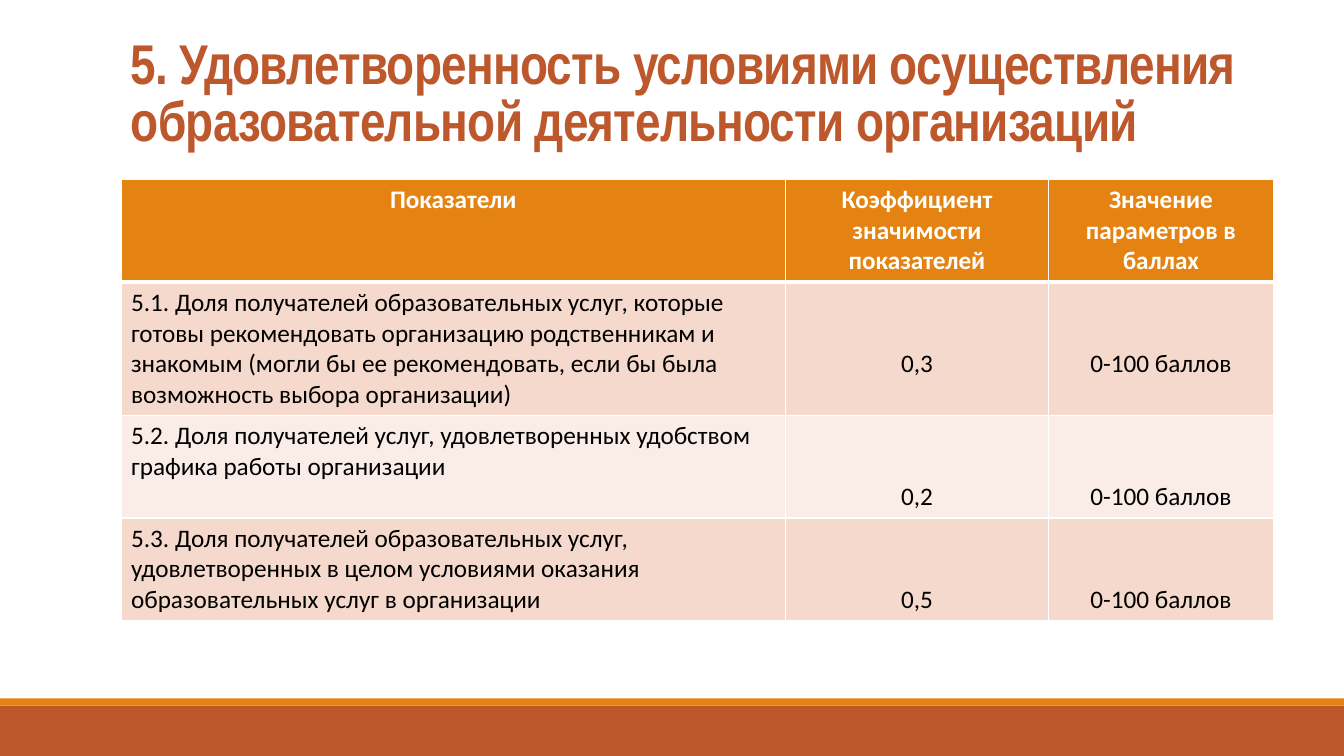
"""Build the slide on satisfaction with the conditions of educational activity."""
from dataclasses import dataclass

from lxml.etree import SubElement
from pptx import Presentation
from pptx.dml.color import RGBColor
from pptx.enum.shapes import MSO_SHAPE
from pptx.enum.text import MSO_ANCHOR, PP_ALIGN
from pptx.oxml.ns import qn
from pptx.slide import Slide
from pptx.table import _Cell
from pptx.util import Inches, Pt

COLORS = {
    "rust": "BD582C",
    "orange": "E48312",
    "white": "FFFFFF",
    "black": "000000",
    "odd_row": "F5D9CC",
    "even_row": "FAEDE7",
}
TITLE = "5. Удовлетворенность условиями осуществления образовательной деятельности организаций"
HEADINGS = ("Показатели", "Коэффициент значимости показателей", "Значение параметров в баллах")
SCORE_RANGE = "0-100 баллов"
COLUMN_WIDTHS = (6.59, 2.61, 2.23)
HEADING_HEIGHT = 1.02
VALUE_TOP_MARGIN = 0.66


@dataclass(frozen=True)
class Band:
    top: float
    height: float
    color: str


@dataclass(frozen=True)
class Indicator:
    wording: str
    weight: str
    height: float


BANDS = (Band(7, 0.5, "rust"), Band(6.93, 0.07, "orange"))
INDICATORS = (
    Indicator(
        "5.1. Доля получателей образовательных услуг, которые готовы рекомендовать "
        "организацию родственникам и знакомым (могли бы ее рекомендовать, если бы была "
        "возможность выбора организации)", "0,3", 1.32),
    Indicator(
        "5.2. Доля получателей услуг, удовлетворенных удобством графика работы организации",
        "0,2", 1.02),
    Indicator(
        "5.3. Доля получателей образовательных услуг, удовлетворенных в целом условиями "
        "оказания образовательных услуг в организации", "0,5", 1.02),
)


def rgb(color: str) -> RGBColor:
    return RGBColor.from_string(COLORS[color])


def draw_band(slide: Slide, band: Band) -> None:
    strip = slide.shapes.add_shape(
        MSO_SHAPE.RECTANGLE, 0, Inches(band.top), Inches(13.33), Inches(band.height))
    strip.shadow.inherit = False
    strip.fill.solid()
    strip.fill.fore_color.rgb = rgb(band.color)
    strip.line.fill.background()


def draw_title(slide: Slide) -> None:
    heading = slide.shapes.add_textbox(Inches(1.2), Inches(0.31), Inches(11.43), Inches(1.26))
    frame = heading.text_frame
    frame.word_wrap = True
    frame.vertical_anchor = MSO_ANCHOR.BOTTOM
    frame.text = TITLE
    paragraph = frame.paragraphs[0]
    paragraph.line_spacing = 0.85
    run = paragraph.runs[0]
    run.font.name = "Arial Narrow"
    run.font.size = Pt(40)
    run.font.bold = True
    run.font.color.rgb = rgb("rust")
    run.font._element.set("spc", "-50")


def add_borders(cell: _Cell, row: int) -> None:
    thick_side = {0: "lnB", 1: "lnT"}.get(row)
    properties = cell._tc.get_or_add_tcPr()
    for side in ("lnL", "lnR", "lnT", "lnB"):
        width = Pt(3 if side == thick_side else 1)
        border = SubElement(properties, qn(f"a:{side}"), w=str(width))
        fill = SubElement(border, qn("a:solidFill"))
        SubElement(fill, qn("a:srgbClr"), val=COLORS["white"])


def fill_cell(cell: _Cell, wording: str, row: int, column: int) -> None:
    is_heading = row == 0
    add_borders(cell, row)
    cell.fill.solid()
    cell.fill.fore_color.rgb = rgb("orange" if is_heading else "odd_row" if row % 2 else "even_row")
    cell.text_frame.text = wording
    paragraph = cell.text_frame.paragraphs[0]
    paragraph.alignment = PP_ALIGN.CENTER if is_heading or column else PP_ALIGN.LEFT
    if column and not is_heading:
        cell.margin_top = Inches(VALUE_TOP_MARGIN)
    font = paragraph.runs[0].font
    font.name = "Calibri"
    font.size = Pt(18)
    font.bold = is_heading
    font.color.rgb = rgb("white" if is_heading else "black")


def draw_indicators(slide: Slide) -> None:
    heights = (HEADING_HEIGHT, *(item.height for item in INDICATORS))
    rows = (HEADINGS, *((item.wording, item.weight, SCORE_RANGE) for item in INDICATORS))
    table = slide.shapes.add_table(
        len(rows), len(HEADINGS), Inches(1.2), Inches(1.78),
        Inches(sum(COLUMN_WIDTHS)), Inches(sum(heights))).table
    for column, width in enumerate(COLUMN_WIDTHS):
        table.columns[column].width = Inches(width)
    for row, (height, wordings) in enumerate(zip(heights, rows)):
        table.rows[row].height = Inches(height)
        for column, wording in enumerate(wordings):
            fill_cell(table.cell(row, column), wording, row, column)


def main() -> None:
    presentation = Presentation()
    presentation.slide_width = Inches(13.33)
    presentation.slide_height = Inches(7.5)
    slide = presentation.slides.add_slide(presentation.slide_layouts[6])
    for band in BANDS:
        draw_band(slide, band)
    draw_title(slide)
    draw_indicators(slide)
    presentation.save("out.pptx")


if __name__ == "__main__":
    main()
